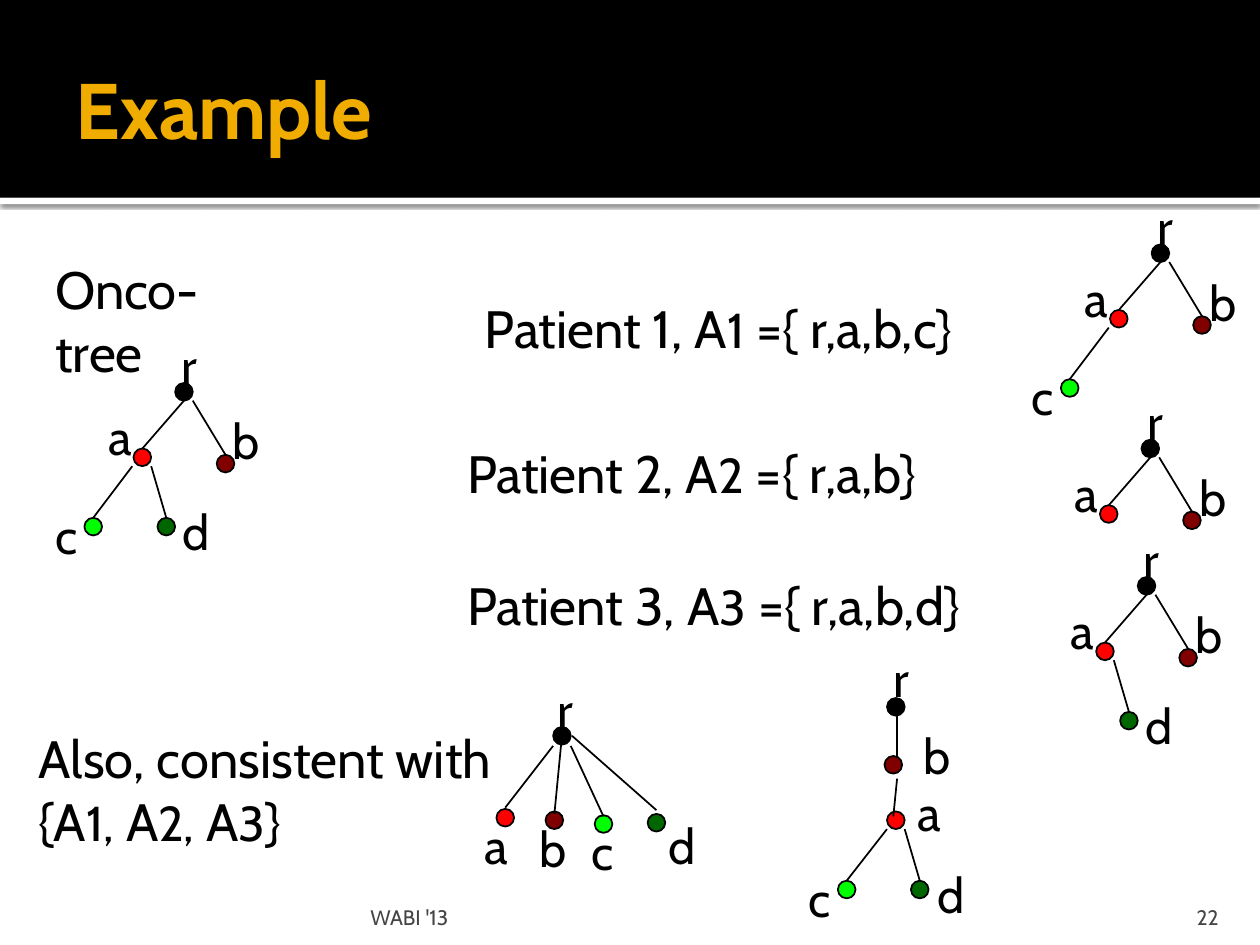
from lxml import etree
from pptx import Presentation
from pptx import util as u
from pptx.dml.color import RGBColor
from pptx.enum import shapes, text
from pptx.oxml import ns

SCALE = 9144
BLACK = RGBColor(0x00, 0x00, 0x00)
WHITE = RGBColor(0xFF, 0xFF, 0xFF)
GOLD = RGBColor(0xF0, 0xAD, 0x00)
GREY = RGBColor(0x45, 0x45, 0x45)
NODE_COLORS = {
    "r": BLACK,
    "a": RGBColor(0xFF, 0x00, 0x00),
    "b": RGBColor(0x80, 0x00, 0x00),
    "c": RGBColor(0x00, 0xFF, 0x00),
    "d": RGBColor(0x00, 0x66, 0x00),
}
LABEL_WIDTHS = {"r": 33, "a": 39, "b": 41, "c": 37, "d": 41}

ONCO = {
    "r": ((0, 0), (-5, -43), None),
    "a": ((-33, 52), (-63, 14), (7, 14, -26, 52)),
    "b": ((33, 57), (36, 17), (14, 14, 40, 57)),
    "c": ((-72, 107), (-105, 92), (-34, 66, -65, 107)),
    "d": ((-14, 107), (-4, 89), (-19, 66, -7, 107)),
}
STAR = {
    "r": ((0, 0), (-6, -43), None),
    "a": ((-45, 65), (-64, 65), (0, 15, -38, 64)),
    "b": ((-6, 67), (-21, 68), (7, 7, 1, 69)),
    "c": ((33, 70), (21, 70), (14, 15, 40, 71)),
    "d": ((75, 69), (82, 65), (15, 7, 82, 66)),
}
CHAIN = {
    "r": ((0, 0), (-5, -44), None),
    "b": ((-2, 46), (19, 17), (8, 14, 8, 46)),
    "a": ((0, 90), (14, 62), (8, 64, 5, 94)),
    "c": ((-39, 145), (-72, 130), (0, 104, -32, 145)),
    "d": ((19, 145), (30, 127), (14, 104, 26, 145)),
}
TREES = [
    (ONCO, "rabcd", 139, 304),
    (ONCO, "rabc", 914, 194),
    (ONCO, "rab", 906, 349),
    (ONCO, "rabd", 903, 458),
    (STAR, "rabcd", 439, 577),
    (CHAIN, "rbacd", 704, 554),
]
PATIENTS = [
    ("1", "r,a,b,c", 375, 230, 420),
    ("2", "r,a,b", 361, 345, 395),
    ("3", "r,a,b,d", 361, 450, 499),
]


def px(*lengths):
    return [u.Emu(length * SCALE) for length in lengths]


def assign(target, values):
    for name, value in values.items():
        setattr(target, name, value)


class Painter:
    font = "Cabin"
    node_size = 14

    def __init__(self, page):
        self.page = page

    def fill_text(self, frame, lines, color=BLACK, bold=False, align=text.PP_ALIGN.LEFT):
        for index, line in enumerate(lines):
            para = frame.paragraphs[0] if index == 0 else frame.add_paragraph()
            para.alignment = align
            for words, size in line:
                span = para.add_run()
                span.text = words
                assign(span.font, {"name": self.font, "size": u.Pt(size), "bold": bold})
                span.font.color.rgb = color

    def title(self, words, place):
        box = self.page.shapes.title
        assign(box, dict(zip(("left", "top", "width", "height"), px(*place))))
        margins = px(10, 5, 5, 5)
        names = ("margin_left", "margin_top", "margin_right", "margin_bottom")
        assign(box.text_frame, dict(zip(names, margins)))
        assign(box.text_frame, {"vertical_anchor": text.MSO_ANCHOR.MIDDLE, "word_wrap": True})
        self.fill_text(box.text_frame, [[(words, 45)]], GOLD, True)

    def text(self, lines, place, wrap=True):
        box = self.page.shapes.add_textbox(*px(*place))
        assign(box.text_frame, {"word_wrap": wrap, "auto_size": text.MSO_AUTO_SIZE.SHAPE_TO_FIT_TEXT})
        self.fill_text(box.text_frame, lines)

    def footer(self, words, place, side, align):
        box = self.page.shapes.add_textbox(*px(*place))
        margin = px(side)[0]
        assign(box.text_frame, {
            "word_wrap": True,
            "vertical_anchor": text.MSO_ANCHOR.BOTTOM,
            "margin_left": margin,
            "margin_right": margin,
            "margin_bottom": 0,
        })
        self.fill_text(box.text_frame, [[(words, 12)]], GREY, align=align)

    def shape(self, kind, place, fill, outlined=False):
        shape = self.page.shapes.add_shape(kind, *px(*place))
        shape.shadow.inherit = False
        shape.fill.solid()
        shape.fill.fore_color.rgb = fill
        if outlined:
            shape.line.color.rgb = BLACK
            shape.line.width = u.Pt(1)
        else:
            shape.line.fill.background()
        return shape

    def band(self, place, fill, shadow=False):
        band = self.shape(shapes.MSO_SHAPE.RECTANGLE, place, fill)
        if shadow:
            effects = band._element.spPr.find(ns.qn("a:effectLst"))
            outer = etree.SubElement(effects, ns.qn("a:outerShdw"), blurRad=str(u.Pt(2.5)),
                                     dist=str(u.Pt(0.8)), dir="5400000", algn="t", rotWithShape="0")
            tint = etree.SubElement(outer, ns.qn("a:srgbClr"), val=str(BLACK))
            etree.SubElement(tint, ns.qn("a:alpha"), val="60000")

    def edge(self, points):
        line = self.page.shapes.add_connector(shapes.MSO_CONNECTOR.STRAIGHT, *px(*points))
        line.line.color.rgb = BLACK
        line.line.width = u.Pt(1)
        etree.SubElement(line._element.spPr, ns.qn("a:effectLst"))

    def tree(self, layout, events, left, top):
        for event in events:
            (x, y), _, _ = layout[event]
            place = (left + x, top + y, self.node_size, self.node_size)
            self.shape(shapes.MSO_SHAPE.OVAL, place, NODE_COLORS[event], True)
        for event in events:
            _, (x, y), edge = layout[event]
            if edge:
                x1, y1, x2, y2 = edge
                self.edge((left + x1, top + y1, left + x2, top + y2))
            self.text([[(event, 28)]], (left + x, top + y, LABEL_WIDTHS[event], 57), False)


def main():
    deck = Presentation()
    deck.slide_width, deck.slide_height = px(1000, 750)
    page = deck.slides.add_slide(deck.slide_layouts[5])
    page.background.fill.solid()
    page.background.fill.fore_color.rgb = WHITE
    painter = Painter(page)

    painter.band((0, 157, 1000, 5), WHITE, True)
    painter.band((0, 0, 1000, 157), BLACK)
    title = page.shapes.title._element
    page.shapes._spTree.append(title)
    painter.title("Example", (50, 17, 900, 137))
    painter.footer("WABI '13", (289, 708, 602, 30), 5, text.PP_ALIGN.LEFT)
    painter.footer("22", (897, 708, 80, 30), 10, text.PP_ALIGN.RIGHT)

    for tree in TREES:
        painter.tree(*tree)
    for number, events, left, top, width in PATIENTS:
        line = [("Patient " + number + ", A", 30), (number, 28), (" ={ " + events + "}", 30)]
        painter.text([line], (left, top, width, 61))
    painter.text([[("Onco-tree", 30)]], (34, 199, 190, 61))
    sets = [("{A", 30), ("1,", 28), (" A", 30), ("2,", 28), (" A", 30), ("3", 28), ("}", 30)]
    painter.text([[("Also, consistent with", 30)], sets], (21, 571, 499, 111))
    deck.save("out.pptx")


if __name__ == "__main__":
    main()
